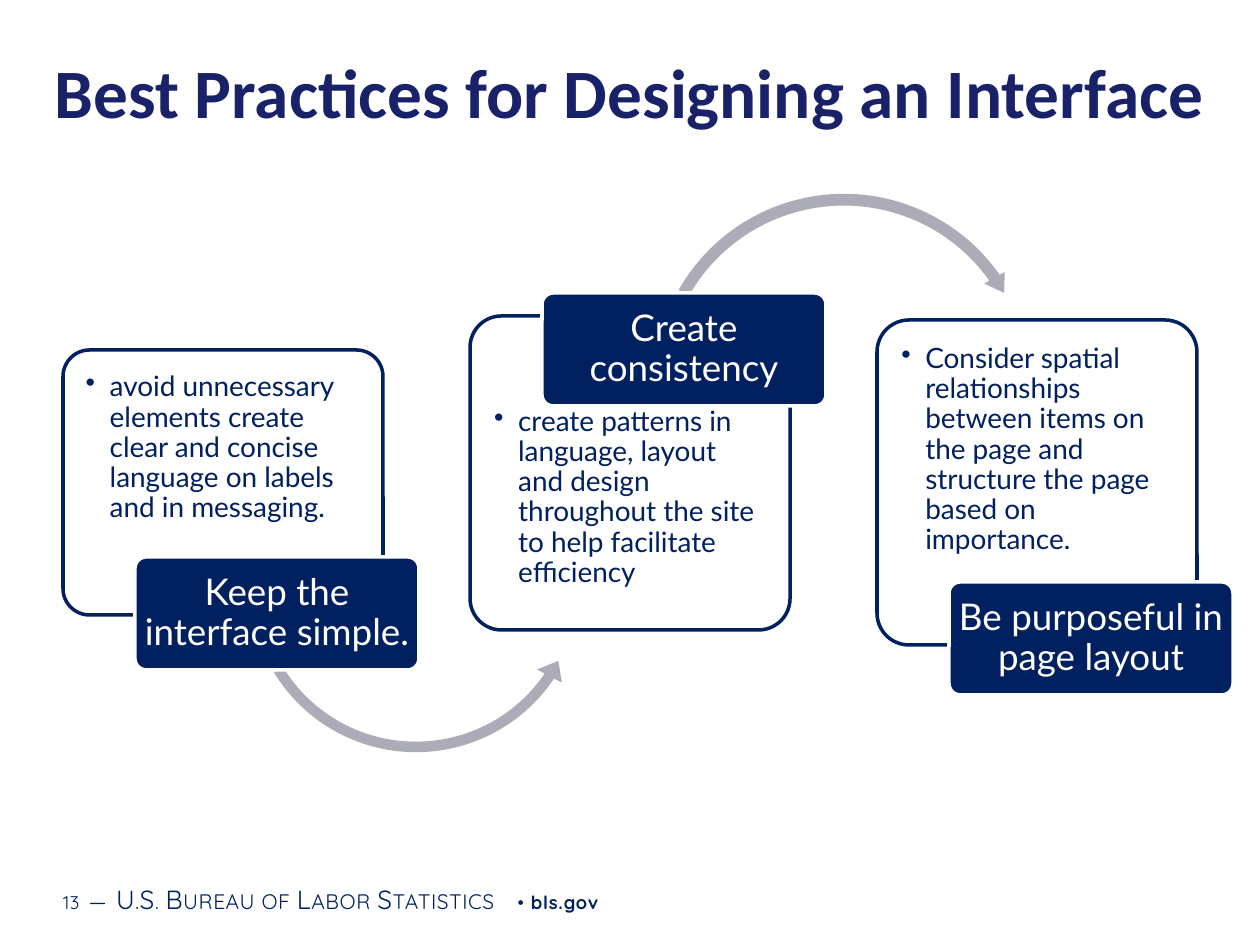
from lxml.etree import SubElement
from pptx import Presentation
from pptx.dml.color import RGBColor
from pptx.enum.shapes import MSO_SHAPE
from pptx.enum.text import MSO_ANCHOR, MSO_AUTO_SIZE, PP_ALIGN
from pptx.oxml.ns import qn
from pptx.util import Pt

EMU_PER_PX = 914400 / 126
NAVY, WHITE, GRAY = "002060", "FFFFFF", "ABACB7"
CARD_LEFT, CARD_STEP, CARD_WIDTH = 63, 407, 320
LABEL_SHIFT, LABEL_WIDTH, LABEL_HEIGHT = 72, 284, 113

CARDS = [
    (350, 265, 15, 557, "Keep the interface simple.",
     "avoid unnecessary elements create clear and concise language on labels "
     "and in messaging."),
    (316, 314, 82, 293, "Create consistency",
     "create patterns in language, layout and design throughout the site "
     "to help facilitate efficiency"),
    (320, 325, 15, 582, "Be purposeful in page layout",
     "Consider spatial relationships between items on the page and structure "
     "the page based on importance."),
]
ARROWS = [
    (MSO_SHAPE.LEFT_CIRCULAR_ARROW, (241, 411, 350, 350),
     (0.03, 3.77, 20.42, 89.14, 0.04)),
    (MSO_SHAPE.CIRCULAR_ARROW, (648, 188, 392, 392),
     (0.03, 3.35, 194.89, 125.75, 0.03)),
]
FOOTER_RUNS = [
    ("13", 10.5, 50, False, False),
    (" ", 16, 50, False, False),
    ("—", 15, 30, True, False),
    (" ", 16, 50, False, False),
    ("U.S. Bureau of Labor Statistics", 15, 30, True, False),
    (" • ", 10.5, 50, False, False),
    ("bls.gov", 10.5, 50, False, True),
]


def px(value):
    """Turn pixels into EMU."""
    return round(value * EMU_PER_PX)


def rgb(color):
    """Turn a hex string into a colour."""
    return RGBColor.from_string(color)


def set_frame(tf, anchor, insets):
    """Set wrapping, anchor and left, top, right, bottom insets."""
    tf.word_wrap = True
    tf.auto_size = MSO_AUTO_SIZE.NONE
    tf.vertical_anchor = anchor
    tf.margin_left, tf.margin_top, tf.margin_right, tf.margin_bottom = map(px, insets)


def add_run(p, text, size, font, color, bold=False):
    """Add a formatted run to a paragraph."""
    r = p.add_run()
    r.text = text
    r.font.size, r.font.name, r.font.bold = Pt(size), font, bold
    r.font.color.rgb = rgb(color)
    return r


def add_shape(s, kind, box, fill, line=None):
    """Add a flat preset shape."""
    sp = s.shapes.add_shape(kind, *map(px, box))
    sp.shadow.inherit = False
    sp.fill.solid()
    sp.fill.fore_color.rgb = rgb(fill)
    if line:
        sp.line.color.rgb = rgb(line)
        sp.line.width = Pt(2)
    else:
        sp.line.fill.background()
    return sp


def add_panel(s, box, fill, line):
    """Add a rounded box and return it."""
    sp = add_shape(s, MSO_SHAPE.ROUNDED_RECTANGLE, box, fill, line)
    sp.adjustments[0] = 0.1
    return sp


def add_card(s, box, top_inset, text):
    """Add an outlined card with one bullet."""
    tf = add_panel(s, box, WHITE, NAVY).text_frame
    set_frame(tf, MSO_ANCHOR.TOP, (15, top_inset, 19, 17))
    p = tf.paragraphs[0]
    p.alignment, p.line_spacing = PP_ALIGN.LEFT, 0.9
    pPr = p._p.get_or_add_pPr()
    pPr.set("marL", str(px(24)))
    pPr.set("indent", str(px(-24)))
    SubElement(pPr, qn("a:buChar")).set("char", "•")
    add_run(p, text, 16, "Lato", NAVY)


def add_label(s, box, text):
    """Add a filled label with centred text."""
    tf = add_panel(s, box, NAVY, WHITE).text_frame
    set_frame(tf, MSO_ANCHOR.MIDDLE, (5, 4, 5, 4))
    p = tf.paragraphs[0]
    p.alignment, p.line_spacing = PP_ALIGN.CENTER, 0.9
    add_run(p, text, 21, "Lato", WHITE)


def add_arrow(s, kind, box, values):
    """Add a circular arrow shaped by its adjustment values."""
    sp = add_shape(s, kind, box, GRAY)
    for i, value in enumerate(values):
        sp.adjustments[i] = value


def add_process(s):
    """Add the cards, each followed by its arrow and label."""
    for i, (top, height, inset, label_top, label, text) in enumerate(CARDS):
        left = CARD_LEFT + i * CARD_STEP
        add_card(s, (left, top, CARD_WIDTH, height), inset, text)
        if i < len(ARROWS):
            add_arrow(s, *ARROWS[i])
        add_label(s, (left + LABEL_SHIFT, label_top, LABEL_WIDTH, LABEL_HEIGHT), label)


def add_title(s, box, text):
    """Place and format the title placeholder."""
    title = s.shapes.title
    title.left, title.top, title.width, title.height = map(px, box)
    set_frame(title.text_frame, MSO_ANCHOR.TOP, (12, 6, 12, 6))
    p = title.text_frame.paragraphs[0]
    p.alignment = PP_ALIGN.CENTER
    add_run(p, text, 39.6, "Calibri", "192168", True)


def add_footer(s, box):
    """Add the page number, agency and site line."""
    tf = s.shapes.add_textbox(*map(px, box)).text_frame
    set_frame(tf, MSO_ANCHOR.MIDDLE, (9, 5, 9, 5))
    for text, size, spacing, small_caps, bold in FOOTER_RUNS:
        r = add_run(tf.paragraphs[0], text, size, "Quicksand", NAVY, bold)
        rPr = r._r.get_or_add_rPr()
        rPr.set("spc", str(spacing))
        if small_caps:
            rPr.set("cap", "small")


def main():
    """Build and save the slide."""
    prs = Presentation()
    prs.slide_width, prs.slide_height = px(1260), px(945)
    s = prs.slides.add_slide(prs.slide_layouts[5])
    add_footer(s, (54, 873, 798, 50))
    add_title(s, (26, 43, 1207, 131), "Best Practices for Designing an Interface")
    add_process(s)
    prs.save("out.pptx")


if __name__ == "__main__":
    main()
